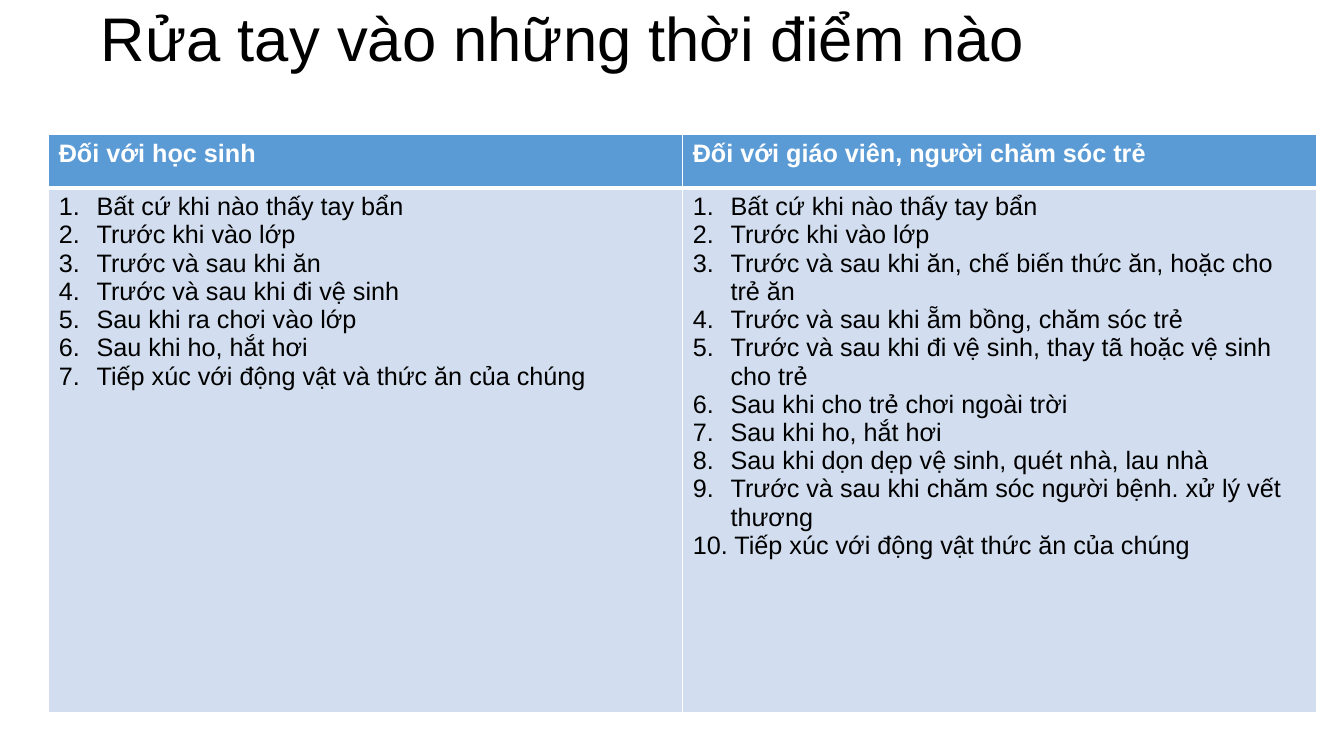
import pptx
import pptx.dml.color
import pptx.enum.text
import pptx.oxml
import pptx.oxml.ns
import pptx.util
from pptx.util import Pt

WHITE = pptx.dml.color.RGBColor(0xFF, 0xFF, 0xFF)
BLACK = pptx.dml.color.RGBColor(0x00, 0x00, 0x00)
HEADER_BLUE = pptx.dml.color.RGBColor(0x5B, 0x9B, 0xD5)
BODY_BLUE = pptx.dml.color.RGBColor(0xD2, 0xDE, 0xEF)
FONT = "Arial"
NUMBER_INDENT = Pt(27)

TITLE = "Rửa tay vào những thời điểm nào"
# Heading, automatically numbered moments, closing lines with a typed number
COLUMNS = [
    (
        "Đối với học sinh",
        [
            "Bất cứ khi nào thấy tay bẩn",
            "Trước khi vào lớp",
            "Trước và sau khi ăn",
            "Trước và sau khi đi vệ sinh",
            "Sau khi ra chơi vào lớp",
            "Sau khi ho, hắt hơi",
            "Tiếp xúc với động vật và thức ăn của chúng",
        ],
        [],
    ),
    (
        "Đối với giáo viên, người chăm sóc trẻ",
        [
            "Bất cứ khi nào thấy tay bẩn",
            "Trước khi vào lớp",
            "Trước và sau khi ăn, chế biến thức ăn, hoặc cho trẻ ăn",
            "Trước và sau khi ẵm bồng, chăm sóc trẻ",
            "Trước và sau khi đi vệ sinh, thay tã hoặc vệ sinh cho trẻ",
            "Sau khi cho trẻ chơi ngoài trời",
            "Sau khi ho, hắt hơi",
            "Sau khi dọn dẹp vệ sinh, quét nhà, lau nhà",
            "Trước và sau khi chăm sóc người bệnh. xử lý vết thương",
        ],
        ["10. Tiếp xúc với động vật thức ăn của chúng"],
    ),
]


def format_runs(paragraph, size, color, bold=False):
    for run in paragraph.runs:
        run.font.name = FONT
        run.font.size = Pt(size)
        run.font.bold = bold
        run.font.color.rgb = color


def add_title(slide):
    title = slide.shapes.title
    title.left, title.top, title.width, title.height = Pt(64.8), Pt(0), Pt(714.24), Pt(59.76)
    frame = title.text_frame
    frame.text = TITLE
    frame.auto_size = pptx.enum.text.MSO_AUTO_SIZE.NONE
    frame.vertical_anchor = pptx.enum.text.MSO_ANCHOR.MIDDLE
    paragraph = frame.paragraphs[0]
    paragraph.alignment = pptx.enum.text.PP_ALIGN.LEFT
    paragraph.line_spacing = 0.9
    format_runs(paragraph, 44, BLACK)


def set_borders(cell, **widths):
    """Draw white borders; widths in points are keyed by side: L, R, T, B."""
    properties = cell._tc.get_or_add_tcPr()
    for side, width in widths.items():
        properties.append(pptx.oxml.parse_xml(
            f'<a:ln{side} {pptx.oxml.ns.nsdecls("a")} w="{Pt(width)}">'
            f'<a:solidFill><a:srgbClr val="{WHITE}"/></a:solidFill></a:ln{side}>'
        ))


def number_paragraph(paragraph):
    properties = paragraph._p.get_or_add_pPr()
    properties.set("marL", str(NUMBER_INDENT))
    properties.set("indent", str(-NUMBER_INDENT))
    properties.append(pptx.oxml.parse_xml(
        f'<a:buAutoNum {pptx.oxml.ns.nsdecls("a")} type="arabicPeriod"/>'
    ))


def fill_cell(cell, lines, fill, color, bold=False, numbered=0):
    """Write the lines into the cell, numbering the first ones."""
    cell.fill.solid()
    cell.fill.fore_color.rgb = fill
    cell.text_frame.text = "\n".join(lines)
    for index, paragraph in enumerate(cell.text_frame.paragraphs):
        if index < numbered:
            number_paragraph(paragraph)
        format_runs(paragraph, 18, color, bold)


def add_moments_table(slide):
    frame = slide.shapes.add_table(
        2, len(COLUMNS), Pt(34.8), Pt(96), Pt(905.76), Pt(413.28)
    )
    table = frame.table
    table.rows[0].height = Pt(38.16)
    table.rows[1].height = Pt(375.12)
    for index, (heading, moments, closing) in enumerate(COLUMNS):
        header, body = table.cell(0, index), table.cell(1, index)
        set_borders(header, L=1, R=1, T=1, B=3)
        set_borders(body, L=1, R=1, T=3, B=1)
        fill_cell(header, [heading], HEADER_BLUE, WHITE, bold=True)
        fill_cell(body, moments + closing, BODY_BLUE, BLACK, numbered=len(moments))


def main():
    presentation = pptx.Presentation()
    presentation.slide_width = Pt(960)
    presentation.slide_height = Pt(540)
    slide = presentation.slides.add_slide(presentation.slide_layouts[5])
    add_title(slide)
    add_moments_table(slide)
    presentation.save("out.pptx")


if __name__ == "__main__":
    main()
